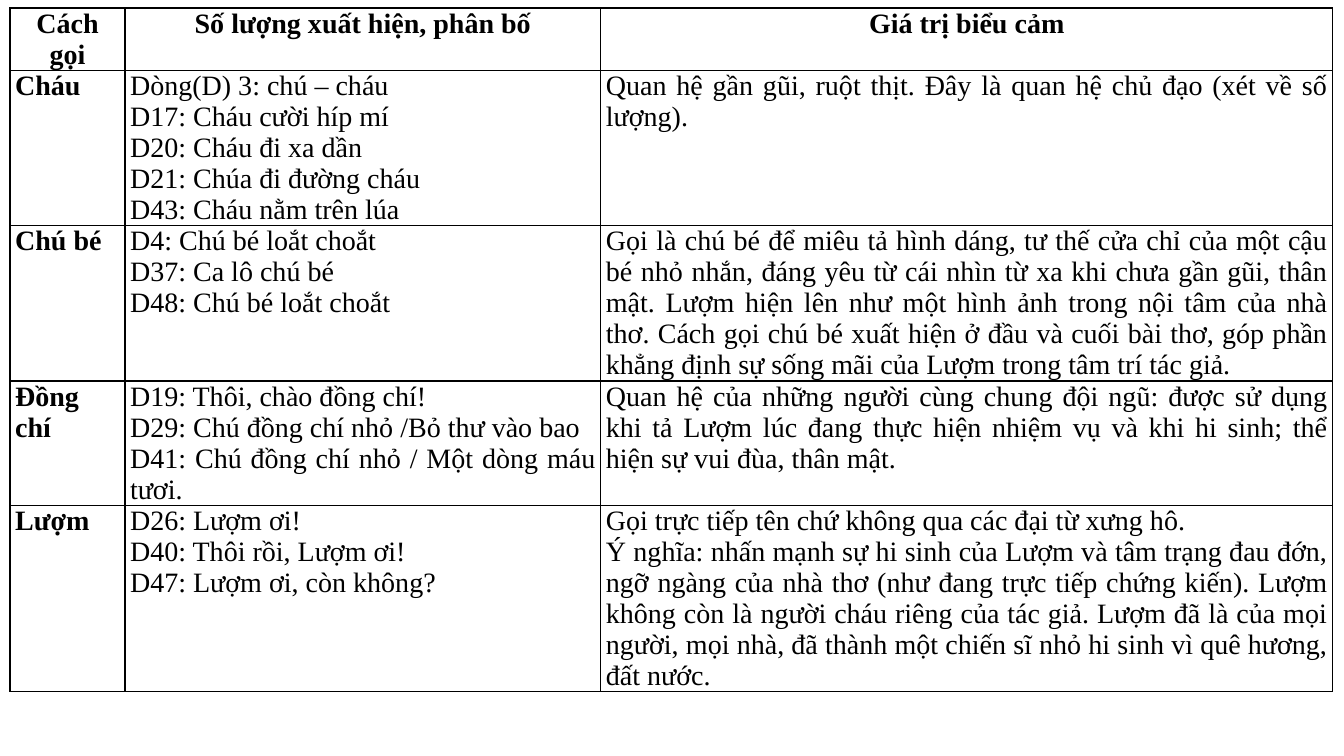
from dataclasses import dataclass

from lxml.etree import SubElement
from pptx import Presentation
from pptx.dml.color import RGBColor
from pptx.enum.text import MSO_ANCHOR, PP_ALIGN as Align
from pptx.oxml.ns import qn
from pptx.util import Inches, Pt


@dataclass(frozen=True)
class Theme:
    font: str = "Times New Roman"
    size: int = 20
    ink: str = "000000"
    border_width: int = 1
    side_margin: float = 0.05


HEADERS = ["Cách gọi", "Số lượng xuất hiện, phân bố", "Giá trị biểu cảm"]
FORMS_OF_ADDRESS = [
    (
        "Cháu",
        [
            "Dòng(D) 3: chú – cháu",
            "D17: Cháu cười híp mí",
            "D20: Cháu đi xa dần",
            "D21: Chúa đi đường cháu",
            "D43: Cháu nằm trên lúa",
        ],
        ["Quan hệ gần gũi, ruột thịt. Đây là quan hệ chủ đạo (xét về số lượng)."],
    ),
    (
        "Chú bé",
        ["D4: Chú bé loắt choắt", "D37: Ca lô chú bé", "D48: Chú bé loắt choắt"],
        [
            "Gọi là chú bé để miêu tả hình dáng, tư thế cửa chỉ của một cậu bé nhỏ nhắn, "
            "đáng yêu từ cái nhìn từ xa khi chưa gần gũi, thân mật. Lượm hiện lên như một "
            "hình ảnh trong nội tâm của nhà thơ. Cách gọi chú bé xuất hiện ở đầu và cuối "
            "bài thơ, góp phần khẳng định sự sống mãi của Lượm trong tâm trí tác giả."
        ],
    ),
    (
        "Đồng chí",
        [
            "D19: Thôi, chào đồng chí!",
            "D29: Chú đồng chí nhỏ /Bỏ thư vào bao",
            "D41: Chú đồng chí nhỏ / Một dòng máu tươi.",
        ],
        [
            "Quan hệ của những người cùng chung đội ngũ: được sử dụng khi tả Lượm lúc "
            "đang thực hiện nhiệm vụ và khi hi sinh; thể hiện sự vui đùa, thân mật."
        ],
    ),
    (
        "Lượm",
        ["D26: Lượm ơi!", "D40: Thôi rồi, Lượm ơi!", "D47: Lượm ơi, còn không?"],
        [
            "Gọi trực tiếp tên chứ không qua các đại từ xưng hô.",
            "Ý nghĩa: nhấn mạnh sự hi sinh của Lượm và tâm trạng đau đớn, ngỡ ngàng của "
            "nhà thơ (như đang trực tiếp chứng kiến). Lượm không còn là người cháu riêng "
            "của tác giả. Lượm đã là của mọi người, mọi nhà, đã thành một chiến sĩ nhỏ "
            "hi sinh vì quê hương, đất nước.",
        ],
    ),
]
COLUMN_WIDTHS = [1.14, 4.72, 7.26]
ROW_HEIGHTS = [0.3, 1.38, 1.36, 0.82, 1.58]


class SlideBuilder:
    def __init__(self, slide, theme):
        self.slide = slide
        self.theme = theme

    def add_table(self, left, top, width, height, column_widths, row_heights, rows):
        """Add a bordered table; each cell of rows is a list of paragraphs."""
        shape = self.slide.shapes.add_table(
            len(row_heights), len(column_widths),
            Inches(left), Inches(top), Inches(width), Inches(height),
        )
        table = shape.table
        table.horz_banding = False
        for column, column_width in zip(table.columns, column_widths):
            column.width = Inches(column_width)
        for row, row_height in zip(table.rows, row_heights):
            row.height = Inches(row_height)
        shape.width, shape.height = Inches(width), Inches(height)
        for row_index, row in enumerate(rows):
            for column_index, paragraphs in enumerate(row):
                is_header = row_index == 0
                self.fill_cell(
                    table.cell(row_index, column_index), paragraphs,
                    bold=is_header or column_index == 0,
                    alignment=Align.CENTER if is_header else Align.JUSTIFY,
                )

    def fill_cell(self, cell, paragraphs, bold, alignment):
        cell.margin_left = cell.margin_right = Inches(self.theme.side_margin)
        cell.margin_top = cell.margin_bottom = 0
        cell.vertical_anchor = MSO_ANCHOR.TOP
        cell.text_frame.text = "\n".join(paragraphs)
        for paragraph in cell.text_frame.paragraphs:
            paragraph.alignment = alignment
            for run in paragraph.runs:
                run.font.name = self.theme.font
                run.font.size = Pt(self.theme.size)
                run.font.bold = bold
                run.font.color.rgb = RGBColor.from_string(self.theme.ink)
        self.add_borders(cell)
        cell.fill.background()

    def add_borders(self, cell):
        properties = cell._tc.get_or_add_tcPr()
        for side in ("lnL", "lnR", "lnT", "lnB"):
            line = SubElement(properties, qn(f"a:{side}"), w=str(Pt(self.theme.border_width)))
            fill = SubElement(line, qn("a:solidFill"))
            SubElement(fill, qn("a:srgbClr"), val=self.theme.ink)


def main():
    presentation = Presentation()
    presentation.slide_width = Inches(13.33)
    presentation.slide_height = Inches(7.5)
    blank_layout = presentation.slide_layouts[6]
    builder = SlideBuilder(presentation.slides.add_slide(blank_layout), Theme())
    rows = [[[header] for header in HEADERS]]
    rows += [[[name], lines, meaning] for name, lines, meaning in FORMS_OF_ADDRESS]
    builder.add_table(0.1, 0.08, 13.13, 7.33, COLUMN_WIDTHS, ROW_HEIGHTS, rows)
    presentation.save("out.pptx")


if __name__ == "__main__":
    main()
